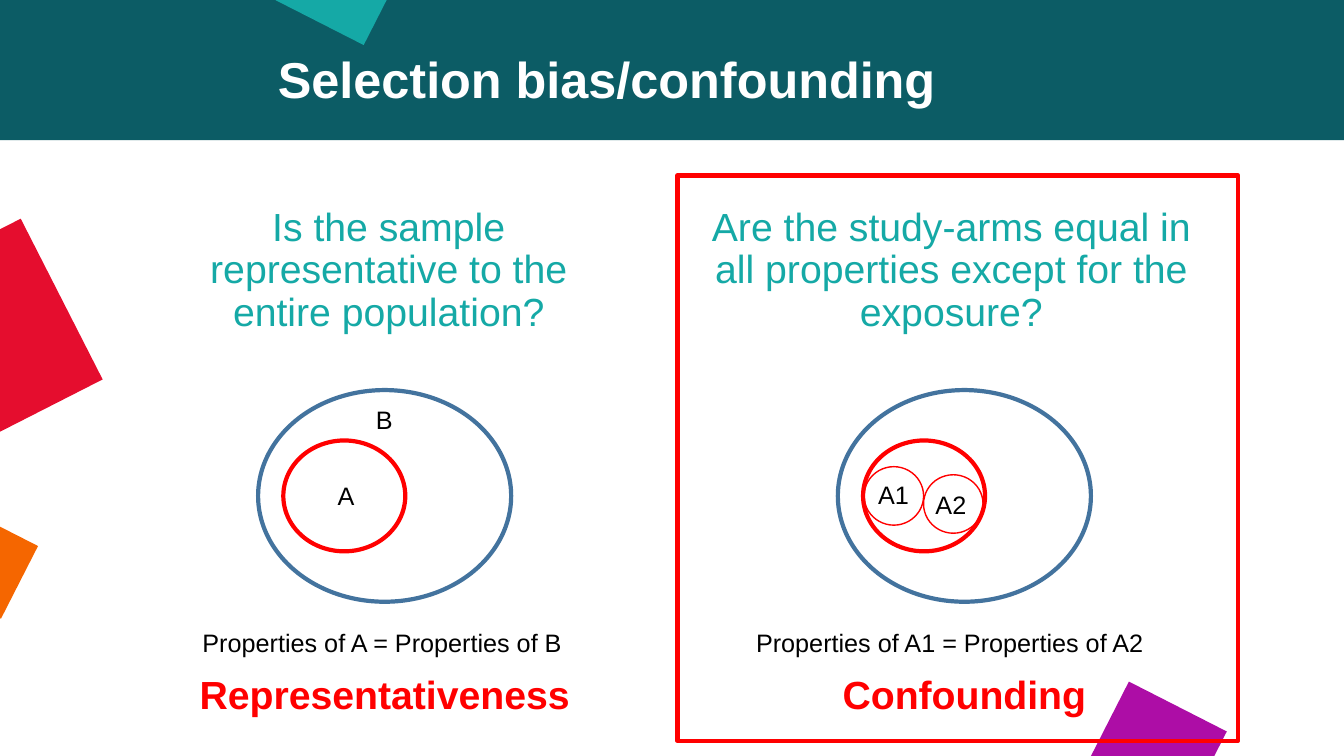
from dataclasses import dataclass

from lxml.etree import SubElement
from pptx import Presentation
from pptx.dml.color import RGBColor
from pptx.enum.shapes import MSO_SHAPE as Preset
from pptx.enum.text import MSO_ANCHOR as Anchor, MSO_AUTO_SIZE as AutoSize, PP_ALIGN as Align
from pptx.oxml.ns import qn
from pptx.shapes.base import BaseShape
from pptx.slide import Slide
from pptx.util import Inches, Pt

COLOURS = {
    "banner": "0C5C65",
    "teal": "15A9A6",
    "crimson": "E50D2E",
    "purple": "AD0DA6",
    "orange": "F56600",
    "blue": "43739E",
    "red": "FF0000",
    "white": "FFFFFF",
    "black": "000000",
}
FONT = "Arial"


@dataclass(frozen=True)
class Area:
    left: float
    top: float
    width: float
    height: float

    def lengths(self) -> list[int]:
        return [Inches(n) for n in (self.left, self.top, self.width, self.height)]


@dataclass(frozen=True)
class Block:
    area: Area
    colour: str
    rotation: float = 0


@dataclass(frozen=True)
class Outline:
    area: Area
    colour: str
    weight: float
    preset: Preset = Preset.OVAL


@dataclass(frozen=True)
class Label:
    text: str
    area: Area


@dataclass(frozen=True)
class Panel:
    shift: float
    question: str
    question_area: Area
    verdict: str
    labels: tuple[Label, ...]


BLOCKS = (
    Block(Area(0, 0, 13.33, 1.39), "banner"),
    Block(Area(-1.09, 2.48, 1.8, 1.79), "crimson", 333),
    Block(Area(10.89, 6.95, 1.09, 1.09), "purple", 27),
    Block(Area(-0.61, 5.18, 0.85, 0.81), "orange", 27),
    Block(Area(2.91, -0.73, 0.98, 1.01), "teal", 27),
)
PANELS = (
    Panel(
        0,
        "Is the sample representative to the entire population?",
        Area(1.7, 2.01, 4.31, 1.18),
        "Representativeness",
        (
            Label("A", Area(3.25, 4.72, 0.37, 0.4)),
            Label("B", Area(3.63, 3.96, 0.37, 0.4)),
            Label("Properties of A = Properties of B", Area(1.91, 6.17, 3.8, 0.4)),
        ),
    ),
    Panel(
        5.75,
        "Are the study-arms equal in all properties except for the exposure?",
        Area(6.87, 2.01, 5.13, 1.18),
        "Confounding",
        (
            Label("A1", Area(8.61, 4.71, 0.51, 0.4)),
            Label("A2", Area(9.18, 4.81, 0.51, 0.4)),
            Label("Properties of A1 = Properties of A2", Area(7.4, 6.17, 4.08, 0.4)),
        ),
    ),
)
STUDY_ARMS = (
    Outline(Area(8.57, 4.63, 0.59, 0.58), "red", 1),
    Outline(Area(9.16, 4.71, 0.59, 0.58), "red", 1),
)
FRAME = Outline(Area(6.72, 1.74, 5.56, 5.61), "red", 3, Preset.RECTANGLE)


def rgb(name: str) -> RGBColor:
    return RGBColor.from_string(COLOURS[name])


def draw_block(page: Slide, block: Block) -> None:
    shape = page.shapes.add_shape(Preset.RECTANGLE, *block.area.lengths())
    shape.shadow.inherit = False
    shape.rotation = block.rotation
    shape.fill.solid()
    shape.fill.fore_color.rgb = rgb(block.colour)
    shape.line.fill.background()


def draw_outline(page: Slide, outline: Outline) -> None:
    shape = page.shapes.add_shape(outline.preset, *outline.area.lengths())
    shape.shadow.inherit = False
    shape.fill.background()
    shape.line.color.rgb = rgb(outline.colour)
    shape.line.width = Pt(outline.weight)


def write(box: BaseShape, text: str, size: float, colour: str, bold: bool = False,
          heading: bool = True) -> None:
    frame = box.text_frame
    frame.word_wrap = heading
    frame.auto_size = AutoSize.NONE if heading else AutoSize.SHAPE_TO_FIT_TEXT
    frame.vertical_anchor = Anchor.TOP
    para = frame.paragraphs[0]
    para.alignment = Align.CENTER if heading else Align.LEFT
    para.line_spacing = 0.9 if heading else 1.0
    para.space_before = Pt(0)
    span = para.add_run()
    span.text = text
    span.font.name = FONT
    span.font.size = Pt(size)
    span.font.bold = bold
    span.font.color.rgb = rgb(colour)


def place(holder: BaseShape, area: Area) -> None:
    holder.left, holder.top, holder.width, holder.height = area.lengths()
    holder.element.getparent().append(holder.element)


def remove_bullet(box: BaseShape) -> None:
    properties = box.text_frame.paragraphs[0]._p.get_or_add_pPr()
    properties.set("marL", "0")
    properties.set("indent", "0")
    SubElement(properties, qn("a:buNone"))


def draw_panel(page: Slide, panel: Panel, body: BaseShape) -> None:
    place(body, panel.question_area)
    remove_bullet(body)
    write(body, panel.question, 28, "teal")
    draw_outline(page, Outline(Area(2.56 + panel.shift, 3.87, 2.51, 2.1), "blue", 3))
    draw_outline(page, Outline(Area(2.81 + panel.shift, 4.37, 1.21, 1.1), "red", 3))
    for label in panel.labels:
        box = page.shapes.add_textbox(*label.area.lengths())
        write(box, label.text, 18, "black", heading=False)
    verdict = page.shapes.add_textbox(*Area(1.66 + panel.shift, 6.65, 4.31, 0.59).lengths())
    write(verdict, panel.verdict, 28, "red", bold=True)


def main() -> None:
    deck = Presentation()
    deck.slide_width, deck.slide_height = Inches(13.33), Inches(7.5)
    page = deck.slides.add_slide(deck.slide_layouts.get_by_name("Two Content"))
    title, *bodies = page.placeholders
    for block in BLOCKS:
        draw_block(page, block)
    place(title, Area(1.77, 0.5, 8.5, 0.41))
    write(title, "Selection bias/confounding", 36, "white", bold=True)
    for panel, body in zip(PANELS, bodies):
        draw_panel(page, panel, body)
    for outline in (*STUDY_ARMS, FRAME):
        draw_outline(page, outline)
    deck.save("out.pptx")


if __name__ == "__main__":
    main()
